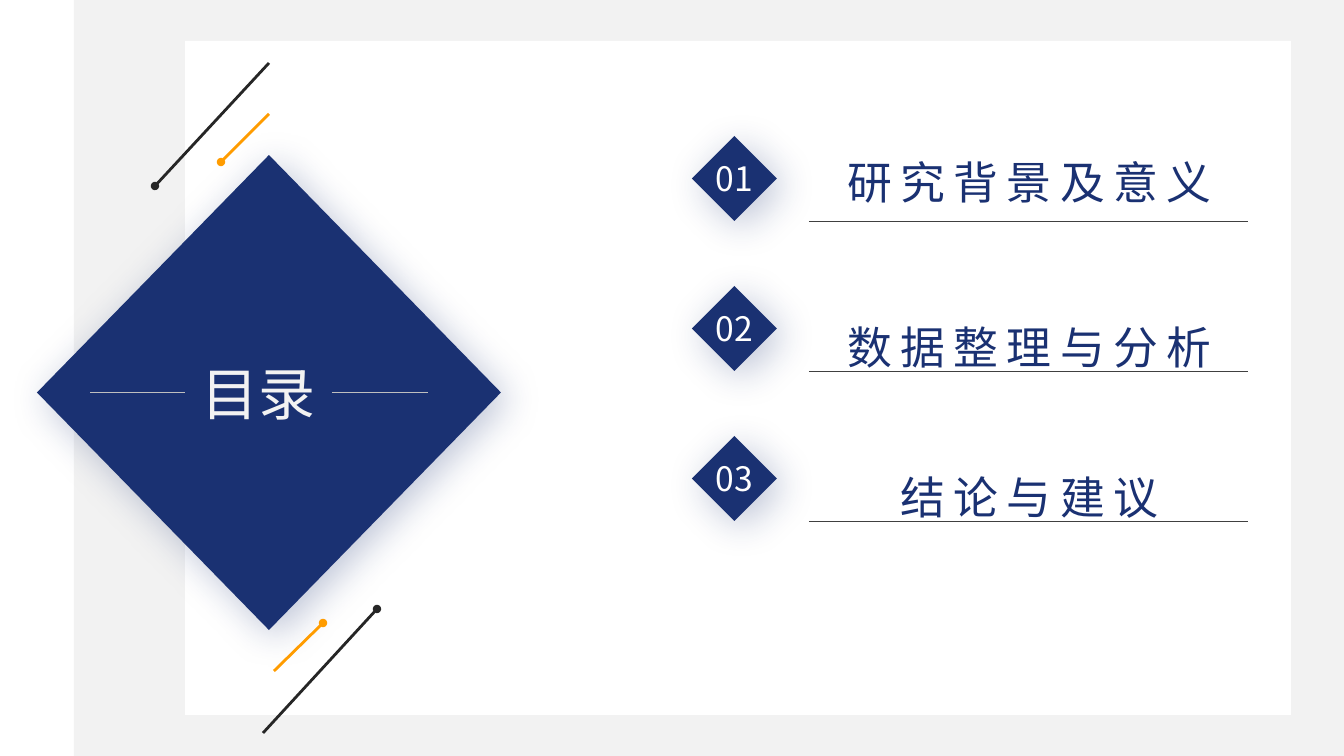
import pptx
import pptx.util
import pptx.dml.color
import pptx.enum.shapes
import pptx.enum.text
import pptx.oxml
import pptx.oxml.ns
from dataclasses import dataclass

SHAPE = pptx.enum.shapes.MSO_SHAPE
ALIGN = pptx.enum.text.PP_ALIGN
ANCHOR = pptx.enum.text.MSO_ANCHOR
A_NS = pptx.oxml.ns.nsdecls("a")


@dataclass(frozen=True)
class Theme:
    navy: str = "1A3172"
    orange: str = "FF9C00"
    ink: str = "262626"
    rule: str = "404040"
    silver: str = "BFBFBF"
    pale: str = "F2F2F2"
    white: str = "FFFFFF"
    cjk_font: str = "Noto Sans CJK JP"
    title_font: str = "Arial"
    title_size: float = 40.7
    item_size: int = 32
    number_size: int = 24
    hairline: float = 0.5
    stroke: int = 2


def px(length):
    return pptx.util.Emu(round(length * 914400 / 100.8))


def rgb(code):
    return pptx.dml.color.RGBColor.from_string(code)


def apply(target, values):
    for name, value in values.items():
        setattr(target, name, value)


class Canvas:
    def __init__(self, slide, theme):
        self.slide = slide
        self.theme = theme

    def block(self, kind, box, color):
        shape = self.slide.shapes.add_shape(kind, *map(px, box))
        shape.shadow.inherit = False
        shape.fill.solid()
        shape.fill.fore_color.rgb = rgb(color)
        shape.line.fill.background()
        return shape

    def diamond(self, box):
        shape = self.block(SHAPE.DIAMOND, box, self.theme.navy)
        effects = shape._element.spPr.find(pptx.oxml.ns.qn("a:effectLst"))
        effects.append(pptx.oxml.parse_xml(
            f'<a:outerShdw {A_NS} blurRad="{pptx.util.Pt(28)}" dist="{pptx.util.Pt(7)}" '
            f'dir="2700000" algn="tl" rotWithShape="0"><a:srgbClr val="{self.theme.navy}">'
            '<a:alpha val="27000"/></a:srgbClr></a:outerShdw>'))
        return shape

    def put_text(self, shape, text, size, color, font, anchor=ANCHOR.MIDDLE,
                 line_spacing=None, tracking=0):
        apply(shape.text_frame, {"word_wrap": False, "vertical_anchor": anchor})
        paragraph = shape.text_frame.paragraphs[0]
        apply(paragraph, {"alignment": ALIGN.CENTER, "line_spacing": line_spacing})
        run = paragraph.add_run()
        run.text = text
        apply(run.font, {"size": pptx.util.Pt(size), "name": font})
        run.font.color.rgb = rgb(color)
        properties = run.font._element
        if tracking:
            properties.set("spc", str(tracking * 100))
        east_asian = pptx.oxml.parse_xml(f'<a:ea {A_NS} typeface="{self.theme.cjk_font}"/>')
        properties.find(pptx.oxml.ns.qn("a:latin")).addnext(east_asian)

    def label(self, box, *text, **style):
        self.put_text(self.slide.shapes.add_textbox(*map(px, box)), *text, **style)

    def line(self, start, end, color, width, dot=False):
        connector = self.slide.shapes.add_connector(
            pptx.enum.shapes.MSO_CONNECTOR.STRAIGHT, *map(px, start + end))
        connector.line.color.rgb = rgb(color)
        connector.line.width = pptx.util.Pt(width)
        if dot:
            connector.line._get_or_add_ln().append(
                pptx.oxml.parse_xml(f'<a:tailEnd {A_NS} type="oval"/>'))
        connector._element.spPr.append(pptx.oxml.parse_xml(f"<a:effectLst {A_NS}/>"))


def main():
    theme = Theme()
    deck = pptx.Presentation()
    apply(deck, {"slide_width": px(1344), "slide_height": px(756)})
    slide = deck.slides.add_slide(deck.slide_layouts[6])
    slide.background.fill.solid()
    slide.background.fill.fore_color.rgb = rgb(theme.pale)
    canvas = Canvas(slide, theme)

    # Backdrop panels
    for box, color in [
        ((0, 0, 74, 756), theme.white),
        ((74, 0, 1270, 756), theme.pale),
        ((185, 41, 1106, 674), theme.white),
    ]:
        canvas.block(SHAPE.RECTANGLE, box, color)

    # Numbered contents
    chapters = [("研究背景及意义", 123), ("数据整理与分析", 288), ("结论与建议", 438)]
    for index, (chapter, chapter_top) in enumerate(chapters):
        top = 136 + 150 * index
        number = canvas.diamond((692, top, 85, 85))
        canvas.put_text(number, f"{index + 1:02}", theme.number_size, theme.white,
                        theme.cjk_font)
        canvas.label((802, chapter_top, 455, 83), chapter, theme.item_size, theme.navy,
                     theme.cjk_font, anchor=ANCHOR.TOP, line_spacing=1.5, tracking=6)
        canvas.line((809, top + 85), (1248, top + 85), theme.rule, theme.hairline)

    # Contents heading
    canvas.diamond((37, 155, 464, 475))
    canvas.label((185, 357, 147, 71), "目录", theme.title_size, theme.pale, theme.title_font)
    for inner, outer in [(185, 90), (332, 428)]:
        canvas.line((inner, 392), (outer, 392), theme.silver, theme.hairline)

    # Dotted accent strokes
    for start, dot_end, color in [
        ((269, 63), (155, 186), theme.ink),
        ((269, 114), (221, 162), theme.orange),
        ((263, 733), (377, 609), theme.ink),
        ((274, 671), (323, 623), theme.orange),
    ]:
        canvas.line(start, dot_end, color, theme.stroke, dot=True)

    deck.save("out.pptx")


if __name__ == "__main__":
    main()
